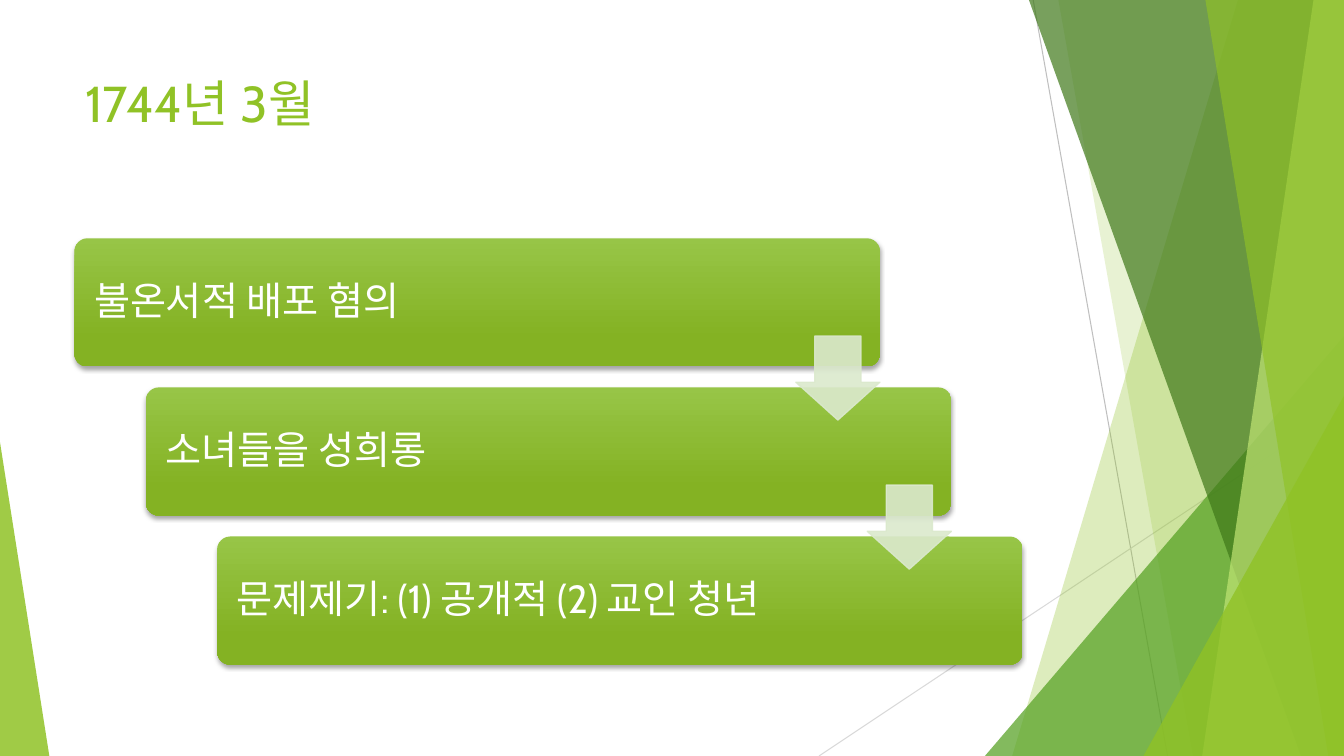
from lxml.etree import SubElement
from pptx import Presentation
from pptx.dml.color import RGBColor
from pptx.enum.shapes import MSO_CONNECTOR, MSO_SHAPE
from pptx.enum.text import MSO_ANCHOR, PP_ALIGN
from pptx.oxml.ns import qn
from pptx.util import Pt

PX = 9525
WIDTH, HEIGHT = 1280, 720
GREEN = "90C226"
STEPS = ["불온서적 배포 혐의", "소녀들을 성희롱", "문제제기: (1) 공개적 (2) 교인 청년"]
STEP_RIGHT, STEP_DOWN = 68, 142

RAYS = [("BFBFBF", (984, 0, 1112, HEIGHT)), ("D9D9D9", (WIDTH, 387, 780, HEIGHT))]


def edge_panel(top_x, bottom_x):
    """Corners of a panel that runs from a slanted side to the right edge."""
    return [(top_x, 0), (WIDTH, 0), (WIDTH, HEIGHT), (bottom_x, HEIGHT)]


def corner_wedge(edge_x, top_y, tip_x):
    return [(edge_x, top_y), (edge_x, HEIGHT), (tip_x, HEIGHT)]


FACETS = [
    (edge_panel(1179, 964), GREEN, 30),
    (edge_panel(1008, 1136), GREEN, 20),
    (corner_wedge(WIDTH, 320, 938), "54A021", 72),
    (edge_panel(980, 1239), "3F7819", 70),
    (edge_panel(1251, 1145), "C0E474", 70),
    (edge_panel(1148, 1265), GREEN, 65),
    (corner_wedge(WIDTH, 377, 1089), GREEN, 80),
    (corner_wedge(0, 421, 47), GREEN, 85),
]


def px(*lengths):
    return [length * PX for length in lengths]


def rgb(hex_code):
    return RGBColor.from_string(hex_code)


def set_opacity(shape, percent):
    """Apply one opacity to the fill and line colours of a shape."""
    for colour in shape.element.spPr.iter(qn("a:srgbClr")):
        SubElement(colour, qn("a:alpha"), val=str(percent * 1000))


def add_ray(slide, colour, ends):
    ray = slide.shapes.add_connector(MSO_CONNECTOR.STRAIGHT, *px(*ends))
    ray.line.color.rgb = rgb(colour)
    ray.line.width = Pt(0.75)
    SubElement(ray.element.spPr, qn("a:effectLst"))


def add_facet(slide, corners, colour, opacity):
    outline = slide.shapes.build_freeform(*corners[0], scale=PX)
    outline.add_line_segments(corners[1:], close=True)
    facet = outline.convert_to_shape()
    facet.shadow.inherit = False
    facet.fill.solid()
    facet.fill.fore_color.rgb = rgb(colour)
    facet.line.fill.background()
    set_opacity(facet, opacity)


def write(shape, text, *, size, colour, anchor, inset=10, spacing=1.0):
    frame = shape.text_frame
    frame.word_wrap = True
    frame.vertical_anchor = anchor
    frame.margin_left = frame.margin_right = inset * PX
    paragraph = frame.paragraphs[0]
    paragraph.alignment = PP_ALIGN.LEFT
    paragraph.line_spacing = spacing
    run = paragraph.add_run()
    run.text = text
    run.font.name = "Cabin"
    run.font.size = Pt(size)
    run.font.color.rgb = rgb(colour)


def add_step(slide, text, left, top):
    step = slide.shapes.add_shape(MSO_SHAPE.ROUNDED_RECTANGLE, *px(left, top, 767, 122))
    step.adjustments[0] = 0.1
    step.line.fill.background()
    step.fill.gradient()
    step.fill.gradient_angle = 270
    shades = [(0, "97C547"), (0.78, "84B223")]
    for stop, (position, colour) in zip(step.fill.gradient_stops, shades):
        stop.position = position
        stop.color.rgb = rgb(colour)
    add_drop_shadow(step)
    write(step, text, size=28, colour="FFFFFF", anchor=MSO_ANCHOR.MIDDLE,
          inset=15, spacing=0.9)


def add_drop_shadow(shape):
    shape.shadow.inherit = False
    effects = shape.element.spPr.find(qn("a:effectLst"))
    shadow = SubElement(effects, qn("a:outerShdw"), blurRad=str(Pt(3)),
                        dist=str(Pt(2)), dir="5400000", rotWithShape="0")
    colour = SubElement(shadow, qn("a:srgbClr"), val="000000")
    SubElement(colour, qn("a:alpha"), val="35000")


def add_step_arrow(slide, left, top):
    arrow = slide.shapes.add_shape(MSO_SHAPE.DOWN_ARROW, *px(left, top, 80, 80))
    arrow.adjustments[0] = 0.55
    arrow.adjustments[1] = 0.45
    arrow.shadow.inherit = False
    arrow.fill.solid()
    arrow.fill.fore_color.rgb = rgb("DBE9CD")
    arrow.line.color.rgb = rgb("DBE9CD")
    arrow.line.width = Pt(1)
    set_opacity(arrow, 90)


def main():
    deck = Presentation()
    deck.slide_width, deck.slide_height = px(WIDTH, HEIGHT)
    slide = deck.slides.add_slide(deck.slide_layouts[6])

    for colour, ends in RAYS:
        add_ray(slide, colour, ends)
    for corners, colour, opacity in FACETS:
        add_facet(slide, corners, colour, opacity)

    title = slide.shapes.add_textbox(*px(71, 64, 902, 138))
    write(title, "1744년 3월", size=36, colour=GREEN, anchor=MSO_ANCHOR.TOP)

    for i, text in enumerate(STEPS):
        add_step(slide, text, 71 + i * STEP_RIGHT, 227 + i * STEP_DOWN)
    for i in range(len(STEPS) - 1):
        add_step_arrow(slide, 758 + i * STEP_RIGHT, 320 + i * STEP_DOWN)

    deck.save("out.pptx")


if __name__ == "__main__":
    main()
